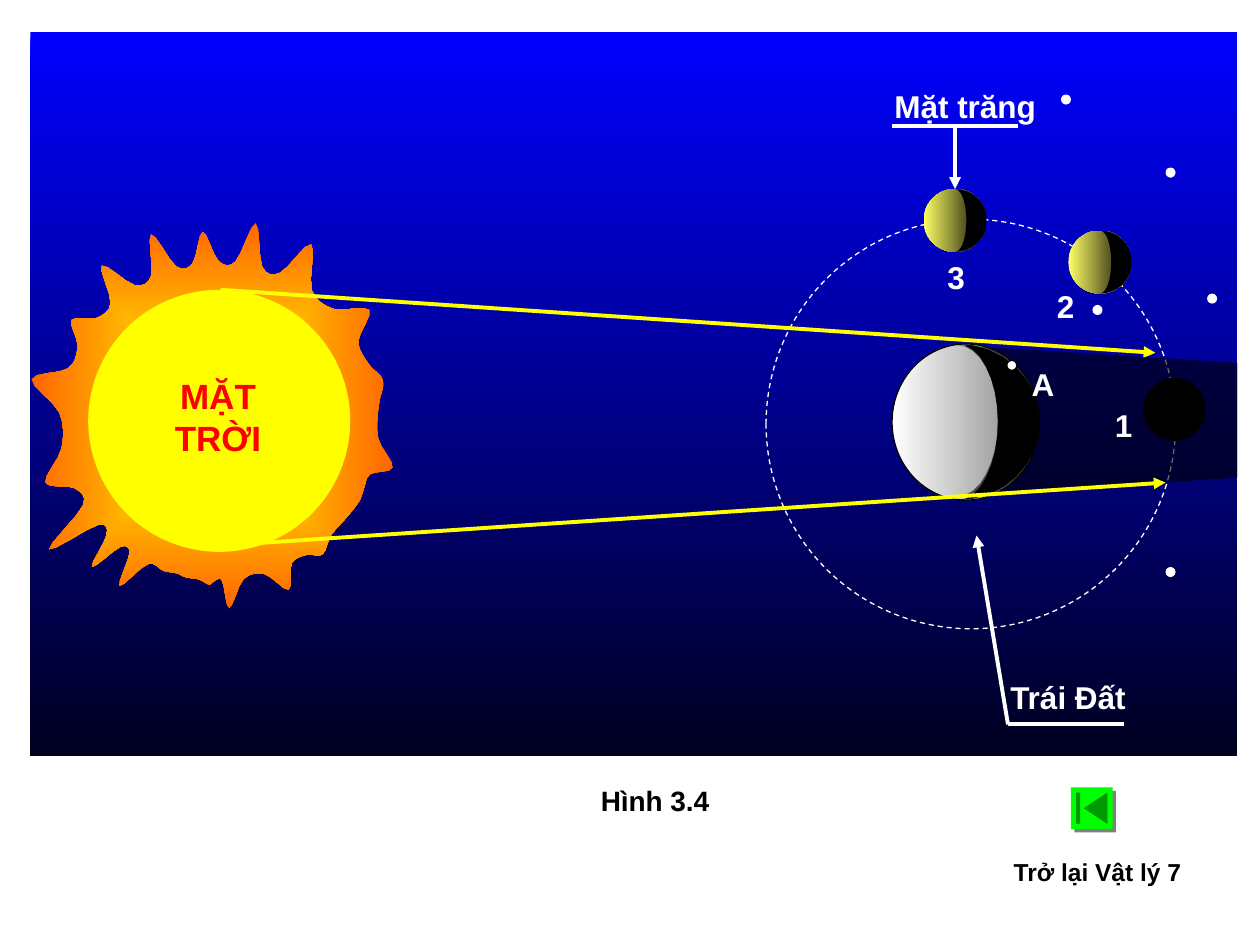
"""Build a slide of the Sun, the Earth and the Moon's phases."""
from math import atan2, cos, pi, sin
from lxml.etree import SubElement
from pptx import Presentation
from pptx.dml.color import RGBColor
from pptx.enum.dml import MSO_LINE
from pptx.enum.shapes import MSO_CONNECTOR as LINK, MSO_SHAPE as SHAPE
from pptx.enum.text import MSO_AUTO_SIZE as AUTO, PP_ALIGN as ALIGN
from pptx.oxml.ns import qn
from pptx.util import Cm, Pt

HUES = {
    "white": "FFFFFF", "black": "000000", "red": "FF0000", "sun": "FFFF00",
    "flame": "FF6600", "moon": "FFFF66", "gray": "808080", "sky": "0000FF",
    "night": "000020", "green": "00FF00",
}
UNIT = 0.0254
TIPS = [
    (203, 177), (247, 194), (293, 246), (304, 302), (312, 371), (285, 398), (256, 440),
    (229, 468), (182, 483), (166, 464), (140, 455), (95, 465), (73, 450), (39, 436),
    (36, 383), (25, 301), (57, 254), (81, 211), (120, 186), (161, 184),
]
STARS = [(925, 133), (958, 233), (925, 450), (842, 75), (867, 242)]


def hue(name):
    """Return the named colour."""
    return RGBColor.from_string(HUES[name])


def size(*units):
    """Turn hundredths of an inch into lengths."""
    return [Cm(n * UNIT) for n in units]


def paint(shape, fill=None, line=None):
    """Set a plain fill, a two-colour fill or none, and a thin line or none."""
    shape.shadow.inherit = False
    if isinstance(fill, tuple):
        first, last, angle = fill
        shape.fill.gradient()
        shape.fill.gradient_angle = angle
        for stop, name in zip(shape.fill.gradient_stops, (first, last)):
            stop.color.rgb = hue(name)
    elif fill:
        shape.fill.solid()
        shape.fill.fore_color.rgb = hue(fill)
    else:
        shape.fill.background()
    if line:
        shape.line.color.rgb = hue(line)
        shape.line.width = Pt(0.75)
    else:
        shape.line.fill.background()
    return shape


def form(shapes, kind, box, fill=None, line=None):
    """Add a preset shape."""
    return paint(shapes.add_shape(kind, *size(*box)), fill, line)


def disc(shapes, box, fill=None, line=None):
    """Add an ellipse."""
    return form(shapes, SHAPE.OVAL, box, fill, line)


def outline(shapes, points, fill):
    """Add a closed outline through the points."""
    fine = [(x * 10, y * 10) for x, y in points]
    pen = shapes.build_freeform(*fine[0], scale=Cm(UNIT * 100) / 1000)
    pen.add_line_segments(fine[1:], close=True)
    return paint(pen.convert_to_shape(), fill)


def smooth(points, steps=4):
    """Return points on a closed spline through the given ones."""
    out = []
    for i, b in enumerate(points):
        a, c, d = points[i - 1], points[(i + 1) % len(points)], points[(i + 2) % len(points)]
        for t in (n / steps for n in range(steps)):
            out.append(tuple(
                q + t * (r - p) / 2 + t * t * (2 * p - 5 * q + 4 * r - s) / 2
                + t ** 3 * (3 * q - p - 3 * r + s) / 2
                for p, q, r, s in zip(a, b, c, d)))
    return out


def arc(x, y, wide, high, steps=16):
    """Return points down the right half of an ellipse."""
    turns = [pi * n / steps for n in range(steps + 1)]
    return [(x + wide * sin(t), y - high * cos(t)) for t in turns]


def sun(shapes, x=174, y=334, base=127):
    """Add flames with valleys on a ring between the tips."""
    points = []
    for tip, after in zip(TIPS, TIPS[1:] + TIPS[:1]):
        start, end = (atan2(b - y, a - x) for a, b in (tip, after))
        gap = (end - start) % (2 * pi)
        points.append(tip)
        for part in (0.3, 0.7):
            turn = start + gap * part
            points.append((x + base * cos(turn), y + base * sin(turn)))
    flames = outline(shapes, smooth(points), ("sun", "flame", 0))
    grad = flames._element.spPr.find(qn("a:gradFill"))
    grad.remove(grad.find(qn("a:lin")))
    way = SubElement(grad, qn("a:path"), {"path": "rect"})
    SubElement(way, qn("a:fillToRect"), {side: "50000" for side in "ltrb"})


def globe(shapes, box, lit, edge, axis, bulge, line=None):
    """Add a half-lit globe whose dark side starts at a bulging edge."""
    left, top, wide, high = box
    parts = shapes.add_group_shape().shapes
    disc(parts, box, (lit, edge, 0), line)
    y, half = top + high / 2, high / 2
    outer = arc(axis, y, left + wide - axis, half)
    outline(parts, arc(axis, y, bulge, half) + outer[::-1], "black")


def label(shapes, text, box, color="white", points=18, align=ALIGN.LEFT):
    """Add a bold label."""
    frame = shapes.add_textbox(*size(*box)).text_frame
    frame.word_wrap = True
    frame.auto_size = AUTO.SHAPE_TO_FIT_TEXT
    frame.text = text
    para = frame.paragraphs[0]
    para.alignment = align
    font = para.runs[0].font
    font.name, font.size, font.bold = "Arial", Pt(points), True
    font.color.rgb = hue(color)


def line(shapes, ends, color="white", arrow=True):
    """Add a straight line, with an arrowhead if wanted."""
    link = shapes.add_connector(LINK.STRAIGHT, *size(*ends))
    link.line.color.rgb = hue(color)
    link.line.width = Pt(2.25)
    if arrow:
        edge = link._element.spPr.find(qn("a:ln"))
        SubElement(edge, qn("a:tailEnd"), {"type": "triangle"})
    SubElement(link._element.spPr, qn("a:effectLst"))


def button(shapes):
    """Add the back button with its hard shadow."""
    shape = form(shapes, SHAPE.ACTION_BUTTON_BEGINNING, (850, 625, 33, 33), "green")
    cast = SubElement(shape._element.spPr.find(qn("a:effectLst")), qn("a:outerShdw"),
                      {"dist": str(int(Pt(2.8))), "dir": "2700000", "algn": "ctr"})
    SubElement(cast, qn("a:srgbClr"), {"val": HUES["gray"]})


def main():
    """Build and save the slide."""
    deck = Presentation()
    deck.slide_width, deck.slide_height = Cm(25.4), Cm(19.05)
    shapes = deck.slides.add_slide(deck.slide_layouts[6]).shapes

    form(shapes, SHAPE.RECTANGLE, (24, 25, 958, 575), ("sky", "night", 270))
    sun(shapes)
    orbit = disc(shapes, (608, 174, 325, 325), line="white")
    orbit.line.dash_style = MSO_LINE.DASH
    disc(shapes, (70, 230, 208, 208), "sun")
    for x, y in ((733, 150), (848, 183)):
        globe(shapes, (x, y, 50, 50), "moon", "black", x + 25, 9)
    globe(shapes, (708, 273, 117, 124), "white", "gray", 760, 32, "black")
    label(shapes, "Mặt trăng", (700, 64, 133, 40))
    label(shapes, "Trái Đất", (792, 533, 133, 40))
    line(shapes, (892, 575, 800, 575), arrow=False)
    line(shapes, (800, 575, 775, 425))
    line(shapes, (758, 100, 758, 150))
    for x, y in STARS:
        disc(shapes, (x, y, 8, 8), "white")
    label(shapes, "Hình 3.4", (467, 617, 117, 37), "black", 16)
    line(shapes, (175, 230, 917, 280), "sun")
    line(shapes, (708, 100, 808, 100), arrow=False)
    label(shapes, "2", (829, 223, 33, 40))
    label(shapes, "3", (742, 200, 33, 40))
    night = [(982, 379), (982, 288)] + arc(760, 334, 32, 60)
    shade = outline(shapes, night, "black")
    tone = shade._element.spPr.find(qn("a:solidFill"))[0]
    SubElement(tone, qn("a:alpha"), {"val": "59000"})
    label(shapes, "1", (875, 317, 33, 40))
    disc(shapes, (799, 286, 8, 8), "white", "black")
    label(shapes, "A", (809, 285, 33, 40))
    disc(shapes, (907, 300, 50, 50), "black")
    line(shapes, (175, 433, 925, 383), "sun")
    label(shapes, "MẶT TRỜI", (127, 292, 92, 77), "red", 20, ALIGN.CENTER)
    button(shapes)
    label(shapes, "Trở lại Vật lý 7", (792, 675, 158, 33), "black", 14, ALIGN.CENTER)
    deck.save("out.pptx")


if __name__ == "__main__":
    main()
